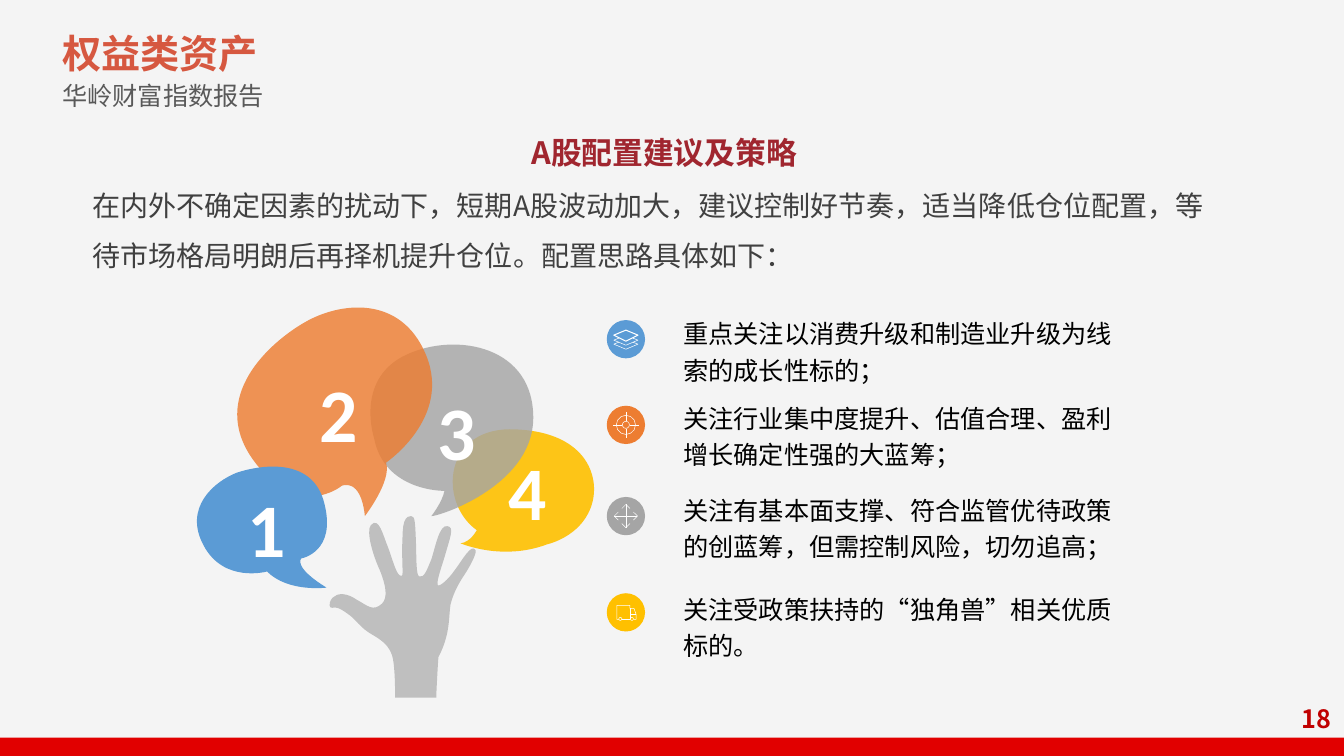
from dataclasses import dataclass

from lxml import etree
from pptx import Presentation
from pptx import util as u
from pptx.dml.color import RGBColor
from pptx.enum import shapes, text
from pptx.oxml.ns import qn


@dataclass(frozen=True)
class Theme:
    cjk: str = "Noto Sans CJK SC"
    latin: str = "Calibri"
    background: str = "F4F4F4"
    bar: str = "E10000"
    title: str = "D65840"
    subtitle: str = "595959"
    heading: str = "A0262F"
    body: str = "404040"
    item: str = "000000"
    page: str = "C00000"
    hand: str = "BFBFBF"
    white: str = "FFFFFF"
    blue: str = "5B9BD5"
    orange: str = "ED7D31"
    grey: str = "A5A5A5"
    yellow: str = "FFC000"
    title_size: int = 28
    heading_size: int = 22
    body_size: int = 20
    small_size: int = 18
    digit_size: int = 54
    thin: float = 0.37
    thick: float = 0.75


THEME = Theme()


@dataclass(frozen=True)
class Line:
    """One paragraph of a text box."""
    words: str
    size: int
    color: str
    bold: bool = False
    font: str = THEME.cjk
    spacing: float = 1.0
    before: int = 0
    align: text.PP_ALIGN = text.PP_ALIGN.LEFT


@dataclass(frozen=True)
class Bubble:
    """Outline points are in hundredths of an inch; 2 numbers: line, 6: curve."""
    digit: str
    left: float
    top: float
    color: str
    opacity: int
    outline: list[tuple]


@dataclass(frozen=True)
class Icon:
    """Offsets from the disc centre, in hundredths of an inch."""
    polylines: tuple = ()  # (width, points)
    strokes: tuple = ()    # (x1, y1, x2, y2)
    rings: tuple = ()      # (x, y, radius)


@dataclass(frozen=True)
class Item:
    words: str
    top: float
    height: float
    center: float
    color: str
    icon: Icon


HAND = [
    (408, 512), (412, 512, 412, 518, 413, 545), (413, 563, 414, 572, 416, 572),
    (421, 573, 423, 567, 428, 555), (432, 543, 436, 520, 444, 522),
    (451, 523, 447, 532, 441, 553), (437, 566, 432, 580, 435, 581),
    (437, 581, 444, 576, 451, 566), (458, 557, 468, 538, 472, 546),
    (473, 550, 465, 564, 461, 570), (457, 576, 450, 587, 447, 600),
    (445, 613, 447, 629, 435, 652), (435, 652, 434, 666, 433, 688),
    (433, 692), (392, 692), (392, 686), (392, 686, 392, 659, 389, 650),
    (386, 642, 382, 637, 370, 630), (357, 623, 353, 614, 345, 609),
    (337, 603, 333, 602, 330, 603), (327, 604, 325, 599, 330, 593),
    (335, 588, 344, 588, 354, 595), (365, 601, 370, 607, 379, 599),
    (385, 593, 383, 581, 377, 566), (370, 551, 363, 527, 368, 521),
    (376, 512, 380, 531, 385, 543), (390, 556, 394, 574, 399, 571),
    (400, 571, 399, 556, 399, 543), (400, 529, 398, 512, 408, 512)]

BUBBLES = [
    Bubble("4", 12.57, 11.61, THEME.yellow, 90, [
        (543, 540), (543, 540, 575, 533, 586, 504), (597, 476, 584, 429, 512, 426),
        (440, 422, 434, 498, 473, 526), (473, 526, 467, 538, 457, 539),
        (457, 539, 498, 557, 543, 540)]),
    Bubble("3", 10.77, 10.1, THEME.grey, 81, [
        (371, 434), (371, 434, 353, 379, 399, 354), (446, 329, 526, 340, 529, 410),
        (533, 480, 437, 512, 428, 512), (428, 512, 439, 498, 441, 487),
        (441, 487, 381, 488, 371, 434)]),
    Bubble("2", 7.8, 9.63, THEME.orange, 82, [
        (339, 482), (339, 482, 358, 473, 362, 512), (362, 512, 389, 477, 383, 459),
        (383, 459, 448, 415, 423, 353), (398, 291, 336, 300, 302, 320),
        (269, 339, 206, 393, 251, 456), (296, 518, 339, 482, 339, 482)]),
    Bubble("1", 5.99, 12.53, THEME.blue, 100, [
        (299, 554), (299, 554, 290, 562, 324, 583), (324, 583, 286, 588, 265, 567),
        (265, 567, 222, 579, 202, 541), (182, 504, 212, 478, 235, 469),
        (259, 461, 311, 453, 322, 500), (334, 548, 299, 554, 299, 554)]),
]

DIRECTIONS = ((1, 0), (0, 1), (-1, 0), (0, -1))
LAYERS = Icon(polylines=(
    (THEME.thick, [(0, -9), (-12, -4), (0, 2), (12, -4), (0, -9)]),
    *((THEME.thin, [(7, y), (12, y + 2), (0, y + 7), (-12, y + 2), (-7, y)])
      for y in (3, -1))))
TARGET = Icon(strokes=tuple((4 * x, 4 * y, 13 * x, 13 * y) for x, y in DIRECTIONS),
              rings=((0, 0, 9.5), (0, 0, 3.5)))
ARROWS = Icon(strokes=((-11.5, 0, 11.5, 0), (0, -11.5, 0, 11.5), *(
    (11.5 * x, 11.5 * y, 7.5 * x + side * y, 7.5 * y + side * x)
    for x, y in DIRECTIONS for side in (-4, 4))))
TRUCK = Icon(
    polylines=((THEME.thin, [(-7, 7), (-9, 7), (-9, -7), (4, -7), (4, -4),
                             (8, -4), (10, 2), (10, 7), (8, 7)]),),
    strokes=((-4, 7, 4, 7), (4, -4, 4, 7), (10, 2, 4, 2)),
    rings=((-5.5, 6.5, 1.5), (6, 6.5, 1.5)))

ITEMS = [
    Item("重点关注以消费升级和制造业升级为线索的成长性标的；", 7.34, 2.49, 336.5, THEME.blue, LAYERS),
    Item("关注行业集中度提升、估值合理、盈利增长确定性强的大蓝筹；", 9.78, 2.18, 421.5, THEME.orange, TARGET),
    Item("关注有基本面支撑、符合监管优待政策的创蓝筹，但需控制风险，切勿追高；",
         12.45, 1.83, 512, THEME.grey, ARROWS),
    Item("关注受政策扶持的“独角兽”相关优质标的。", 15.21, 1.57, 607.5, THEME.yellow, TRUCK),
]
DISC_CENTER, DISC_RADIUS = 621, 19


def hundredths(value: float) -> u.Length:
    return u.Cm(2.54 * value / 100)


def paint(shape, fill: str | None = None, line: str | None = None,
          width: float = THEME.thin, opacity: int = 100) -> None:
    shape.shadow.inherit = False
    if fill:
        shape.fill.solid()
        shape.fill.fore_color.rgb = RGBColor.from_string(fill)
        if opacity < 100:
            color = shape.fill._xPr.find(".//" + qn("a:srgbClr"))
            etree.SubElement(color, qn("a:alpha")).set("val", str(opacity * 1000))
    else:
        shape.fill.background()
    if line:
        shape.line.color.rgb = RGBColor.from_string(line)
        shape.line.width = u.Pt(width)
    else:
        shape.line.fill.background()


def add_text(slide, box: tuple[float, float, float, float], lines: list[Line],
             anchor: text.MSO_ANCHOR = text.MSO_ANCHOR.TOP) -> None:
    frame = slide.shapes.add_textbox(*map(u.Cm, box)).text_frame
    frame.word_wrap = True
    frame.vertical_anchor = anchor
    for index, line in enumerate(lines):
        paragraph = frame.add_paragraph() if index else frame.paragraphs[0]
        paragraph.alignment = line.align
        paragraph.line_spacing = line.spacing
        paragraph.space_before = u.Pt(line.before)
        run = paragraph.add_run()
        run.text = line.words
        run.font.name, run.font.size, run.font.bold = line.font, u.Pt(line.size), line.bold
        run.font.color.rgb = RGBColor.from_string(line.color)
        properties = run._r.get_or_add_rPr()
        properties.set("lang", "zh-CN")
        etree.SubElement(properties, qn("a:ea")).set("typeface", line.font)


def flatten(outline: list[tuple], steps: int = 16) -> list[tuple[float, float]]:
    """Sample the curves, so that the frame fits the drawn outline."""
    points = [outline[0]]
    for segment in outline[1:]:
        controls = (*points[-1], *segment)
        for step in range(1, steps + 1) if len(segment) == 6 else ():
            t = step / steps
            weights = ((1 - t) ** 3, 3 * t * (1 - t) ** 2, 3 * t * t * (1 - t), t ** 3)
            points.append(tuple(sum(w * c for w, c in zip(weights, controls[axis::2]))
                                for axis in (0, 1)))
        if len(segment) == 2:
            points.append(segment)
    return points


def add_polyline(parent, points: list[tuple[float, float]], close: bool = False):
    start, *rest = [(hundredths(x), hundredths(y)) for x, y in points]
    builder = parent.shapes.build_freeform(*start)
    builder.add_line_segments(rest, close=close)
    return builder.convert_to_shape()


def add_curved(parent, outline: list[tuple]):
    """Frame the outline, then give it true Bézier segments."""
    shape = add_polyline(parent, flatten(outline), close=True)
    route = shape._element.find(".//" + qn("a:path"))
    for child in list(route):
        route.remove(child)
    tags = {2: "a:lnTo", 6: "a:cubicBezTo"}
    for index, segment in enumerate(outline):
        command = etree.SubElement(route, qn(tags[len(segment)] if index else "a:moveTo"))
        for x, y in zip(segment[::2], segment[1::2]):
            point = etree.SubElement(command, qn("a:pt"))
            point.set("x", str(hundredths(x) - shape.left))
            point.set("y", str(hundredths(y) - shape.top))
    etree.SubElement(route, qn("a:close"))
    return shape


def add_circle(parent, x: float, y: float, radius: float):
    return parent.shapes.add_shape(shapes.MSO_SHAPE.OVAL, *map(
        hundredths, (x - radius, y - radius, 2 * radius, 2 * radius)))


def add_icon(slide, icon: Icon, x: float, y: float) -> None:
    group = slide.shapes.add_group_shape()
    for width, points in icon.polylines:
        paint(add_polyline(group, [(x + dx, y + dy) for dx, dy in points]),
              line=THEME.white, width=width)
    for dx, dy, radius in icon.rings:
        paint(add_circle(group, x + dx, y + dy, radius), line=THEME.white)
    for x1, y1, x2, y2 in icon.strokes:
        connector = group.shapes.add_connector(shapes.MSO_CONNECTOR.STRAIGHT, *map(
            hundredths, (x + x1, y + y1, x + x2, y + y2)))
        connector.line.color.rgb = RGBColor.from_string(THEME.white)
        connector.line.width = u.Pt(THEME.thin)
        etree.SubElement(connector._element.spPr, qn("a:effectLst"))


def main() -> None:
    presentation = Presentation()
    presentation.slide_width, presentation.slide_height = u.Cm(33.87), u.Cm(19.05)
    slide = presentation.slides.add_slide(presentation.slide_layouts[6])
    slide.background.fill.solid()
    slide.background.fill.fore_color.rgb = RGBColor.from_string(THEME.background)

    # Bottom bar, titles, introduction and page number
    bar = slide.shapes.add_shape(shapes.MSO_SHAPE.RECTANGLE, *map(u.Cm, (0, 18.59, 33.87, 0.46)))
    paint(bar, THEME.bar)
    add_text(slide, (1.32, 0.48, 11.35, 2.46), [
        Line("权益类资产", THEME.title_size, THEME.title, bold=True, spacing=1.12),
        Line("华岭财富指数报告", THEME.small_size, THEME.subtitle, spacing=1.12)])
    add_text(slide, (13.14, 3.25, 13.28, 1.19), [
        Line("A股配置建议及策略", THEME.heading_size, THEME.heading, bold=True,
             align=text.PP_ALIGN.JUSTIFY)])
    add_text(slide, (2.08, 4.19, 28.75, 2.82), [
        Line("在内外不确定因素的扰动下，短期A股波动加大，建议控制好节奏，适当降低仓位配置，"
             "等待市场格局明朗后再择机提升仓位。配置思路具体如下：",
             THEME.body_size, THEME.body, spacing=1.5, before=6)])
    add_text(slide, (32.31, 17.59, 1.5, 1.02), [
        Line("18", THEME.small_size, THEME.page, bold=True, align=text.PP_ALIGN.RIGHT)],
        text.MSO_ANCHOR.MIDDLE)

    # Hand with numbered speech bubbles
    paint(add_curved(slide, HAND), THEME.hand)
    for bubble in BUBBLES:
        paint(add_curved(slide, bubble.outline), bubble.color, opacity=bubble.opacity)
        add_text(slide, (bubble.left, bubble.top, 1.24, 1.5), [
            Line(bubble.digit, THEME.digit_size, THEME.white, bold=True, font=THEME.latin,
                 align=text.PP_ALIGN.CENTER)], text.MSO_ANCHOR.MIDDLE)

    # Recommendations with icon discs
    for item in ITEMS:
        add_text(slide, (16.97, item.top, 11.65, item.height), [
            Line(item.words, THEME.small_size, THEME.item, spacing=1.2)], text.MSO_ANCHOR.BOTTOM)
        paint(add_circle(slide, DISC_CENTER, item.center, DISC_RADIUS), item.color)
        add_icon(slide, item.icon, DISC_CENTER, item.center)

    presentation.save("out.pptx")


if __name__ == "__main__":
    main()
